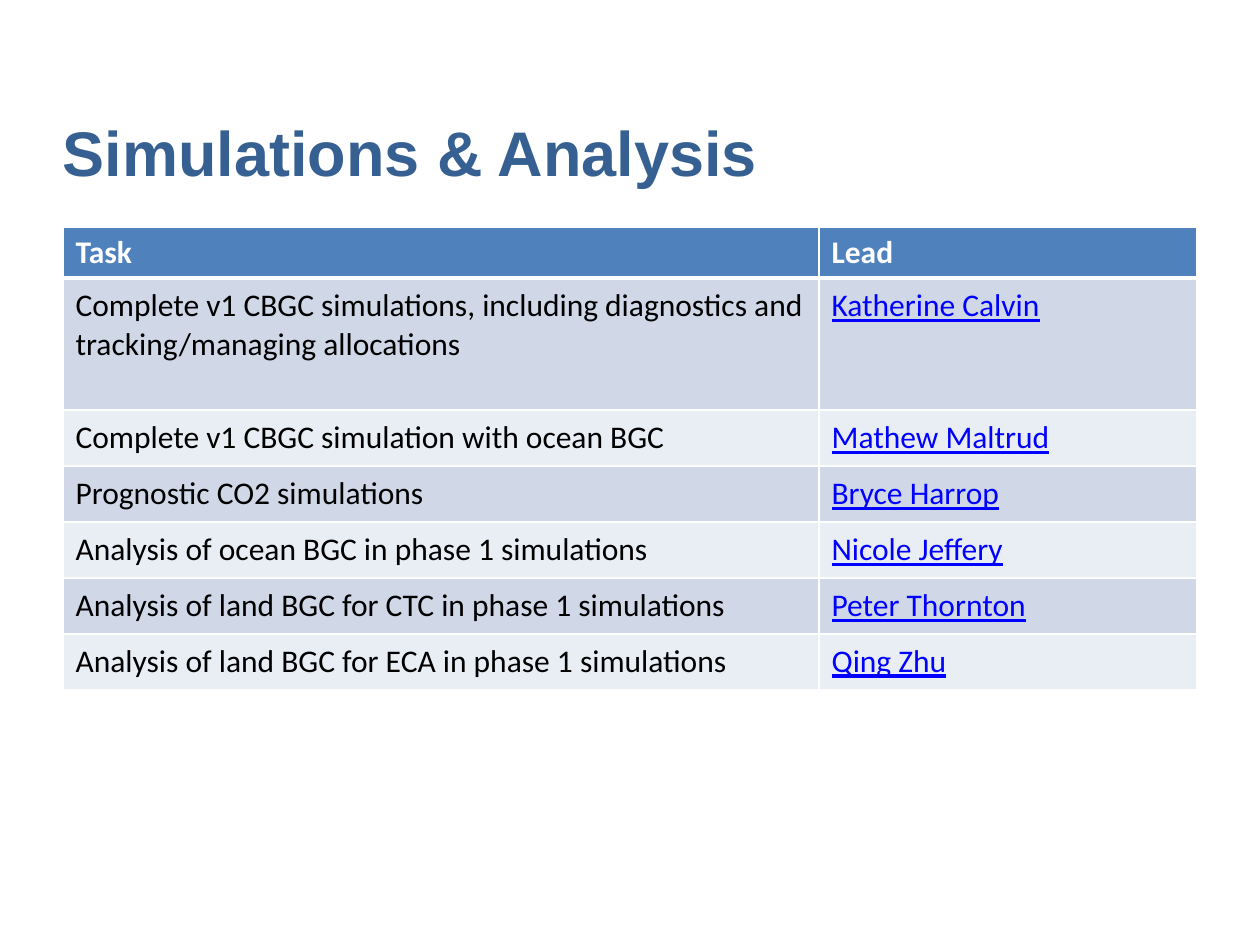
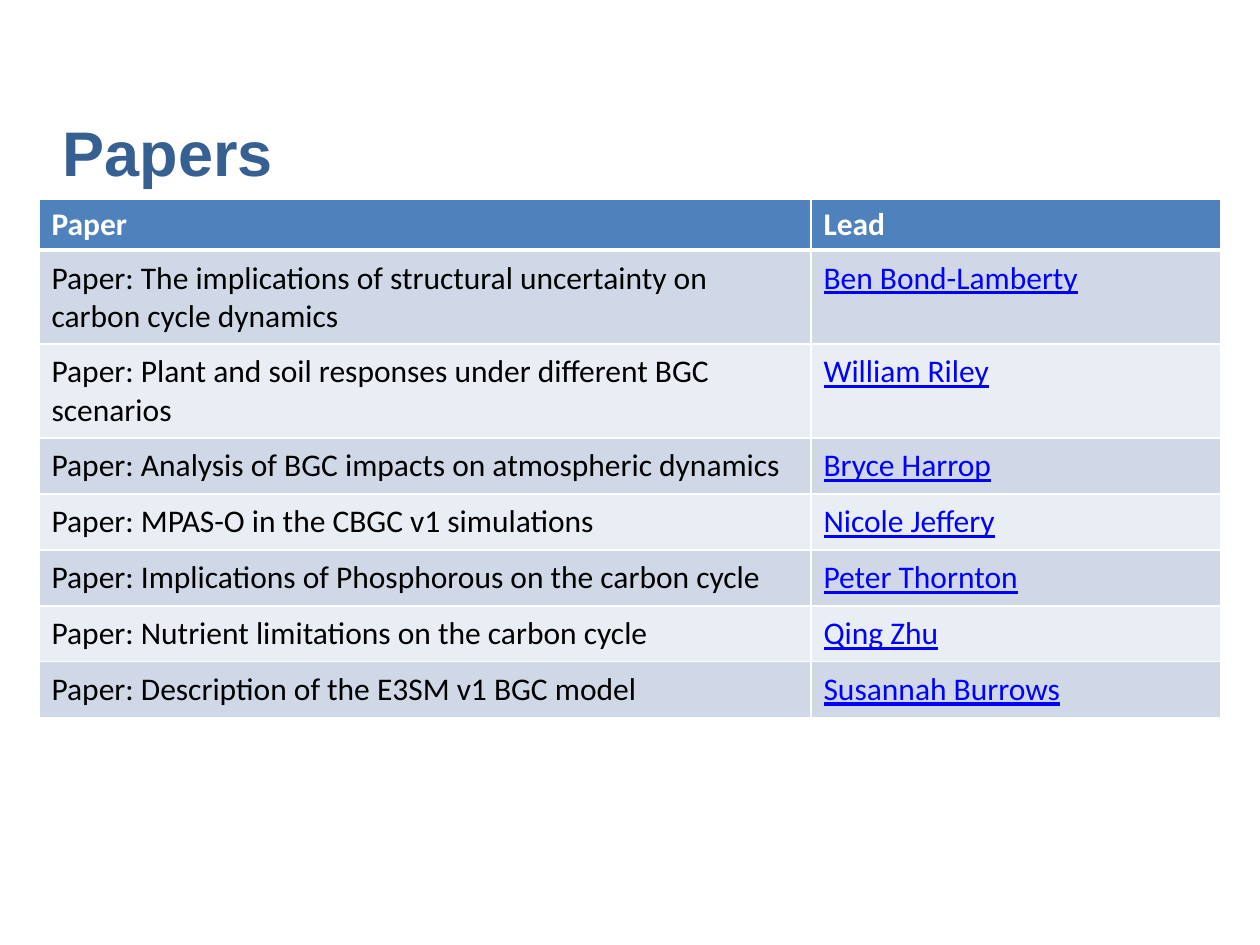
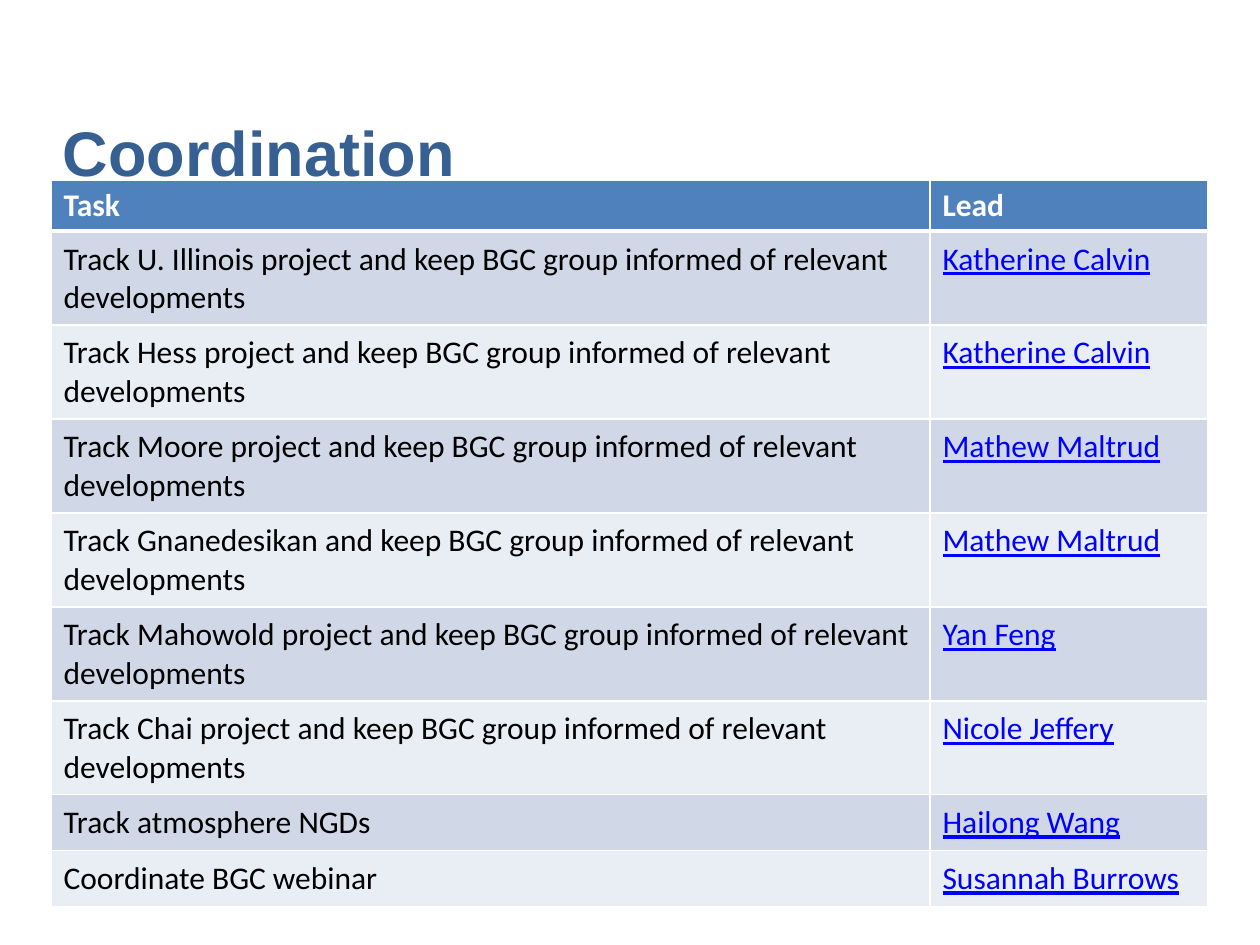
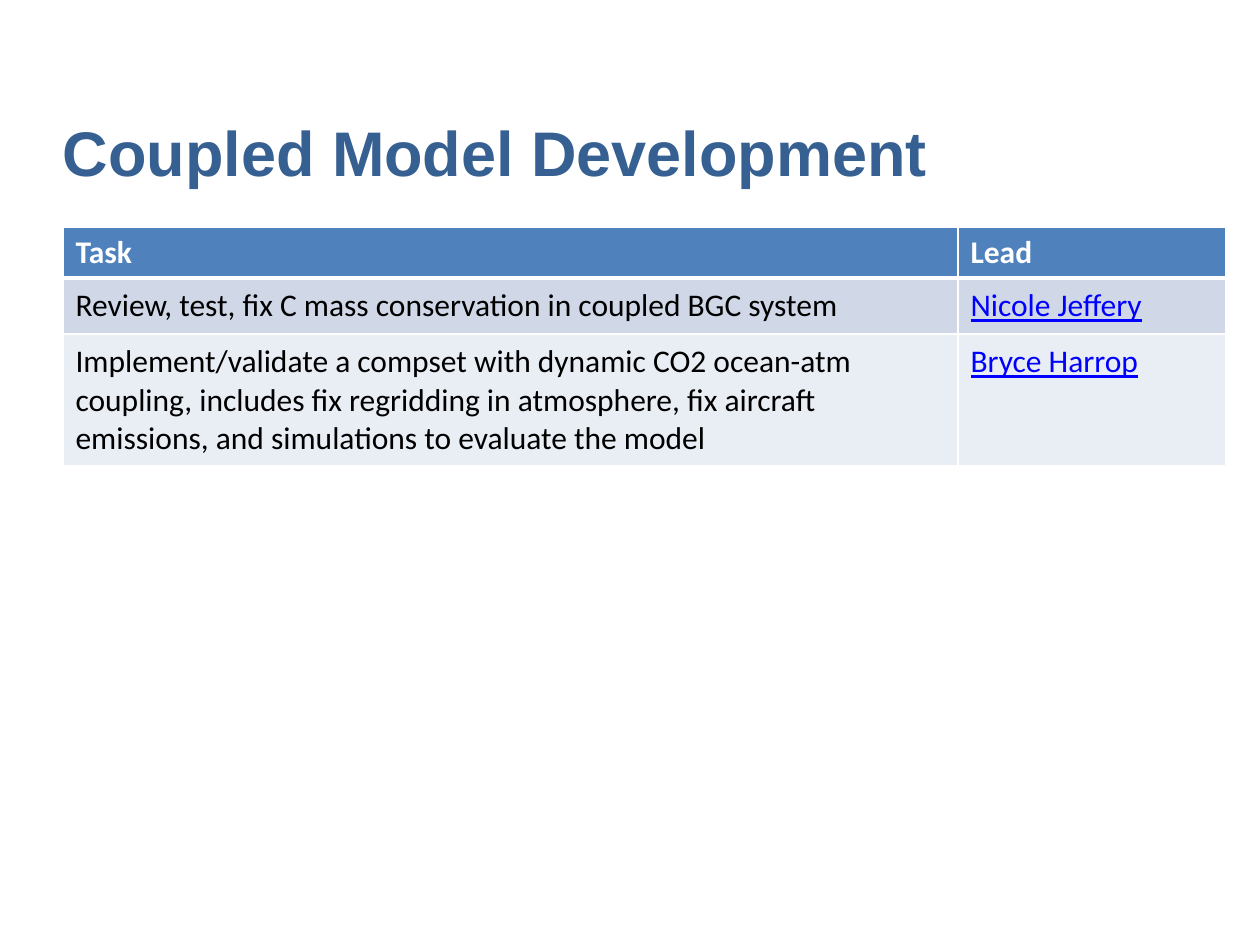
"""Build four slides listing biogeochemistry tasks and papers with their leads."""
from lxml import etree
from pptx import Presentation
from pptx import util as u
from pptx.dml.color import RGBColor
from pptx.enum import text
from pptx.oxml import ns

TRACK = "and keep BGC group informed of relevant developments"

SLIDES = [
    {
        "title": "Simulations & Analysis",
        "header": ("Task", "Lead"),
        "corner": (63, 227),
        "widths": (756, 378),
        "rows": [
            ("Complete v1 CBGC simulations, including diagnostics and tracking/managing allocations",
             "Katherine Calvin", 3),
            ("Complete v1 CBGC simulation with ocean BGC", "Mathew Maltrud", 1),
            ("Prognostic CO2 simulations", "Bryce Harrop", 1),
            ("Analysis of ocean BGC in phase 1 simulations", "Nicole Jeffery", 1),
            ("Analysis of land BGC for CTC in phase 1 simulations", "Peter Thornton", 1),
            ("Analysis of land BGC for ECA in phase 1 simulations", "Qing Zhu", 1),
        ],
    },
    {
        "title": "Papers",
        "header": ("Paper", "Lead"),
        "corner": (39, 199),
        "widths": (772, 410),
        "rows": [
            ("Paper: The implications of structural uncertainty on carbon cycle dynamics",
             "Ben Bond-Lamberty", 2),
            ("Paper: Plant and soil responses under different BGC scenarios", "William Riley", 2),
            ("Paper: Analysis of BGC impacts on atmospheric dynamics", "Bryce Harrop", 1),
            ("Paper: MPAS-O in the CBGC v1 simulations", "Nicole Jeffery", 1),
            ("Paper: Implications of Phosphorous on the carbon cycle", "Peter Thornton", 1),
            ("Paper: Nutrient limitations on the carbon cycle", "Qing Zhu", 1),
            ("Paper: Description of the E3SM v1 BGC model", "Susannah Burrows", 1),
        ],
    },
    {
        "title": "Coordination",
        "header": ("Task", "Lead"),
        "corner": (51, 180),
        "widths": (879, 278),
        "rows": [
            (f"Track U. Illinois project {TRACK}", "Katherine Calvin", 2),
            (f"Track Hess project {TRACK}", "Katherine Calvin", 2),
            (f"Track Moore project {TRACK}", "Mathew Maltrud", 2),
            (f"Track Gnanedesikan {TRACK}", "Mathew Maltrud", 2),
            (f"Track Mahowold project {TRACK}", "Yan Feng", 2),
            (f"Track Chai project {TRACK}", "Nicole Jeffery", 2),
            ("Track atmosphere NGDs", "Hailong Wang", 1),
            ("Coordinate BGC webinar", "Susannah Burrows", 1),
        ],
    },
    {
        "title": "Coupled Model Development",
        "header": ("Task", "Lead"),
        "corner": (63, 227),
        "widths": (895, 268),
        "rows": [
            ("Review, test, fix C mass conservation in coupled BGC system", "Nicole Jeffery", 1),
            ("Implement/validate a compset with dynamic CO2 ocean-atm coupling, includes fix "
             "regridding in atmosphere, fix aircraft emissions, and simulations to evaluate the model",
             "Bryce Harrop", 3),
        ],
    },
]

COLORS = {
    "title": "376092",
    "header": "4F81BD",
    "odd": "D0D8E8",
    "even": "E9EDF4",
    "white": "FFFFFF",
    "black": "000000",
    "lead": "0000FF",
}
TITLE = {"name": "Arial", "size": u.Pt(36), "bold": True}
HEADER = {"name": "Calibri", "size": u.Pt(18), "bold": True}
TASK = {**HEADER, "bold": False}
LEAD = {**TASK, "underline": True}

PX_PER_INCH = 126
PAGE_SIZE = (1260, 945)
TITLE_BOX = (63, 38, 1134, 151)
HEADER_HEIGHT = 51
LINE_HEIGHT = 38
CELL_INSET = 9


def px(length):
    return u.Emu(round(length * u.Inches(1) / PX_PER_INCH))


def write(frame, words, style, color):
    para = frame.paragraphs[0]
    span = para.add_run()
    span.text = words
    for name, value in style.items():
        setattr(span.font, name, value)
    span.font.color.rgb = RGBColor.from_string(COLORS[color])


def add_title(page, words):
    frame = page.shapes.add_textbox(*map(px, TITLE_BOX)).text_frame
    frame.word_wrap = True
    frame.vertical_anchor = text.MSO_ANCHOR.BOTTOM
    for side in ("left", "top", "right", "bottom"):
        setattr(frame, f"margin_{side}", 0)
    write(frame, words, TITLE, "title")


def add_borders(cell, top, bottom):
    properties = cell._tc.get_or_add_tcPr()
    for side, points in {"L": 1, "R": 1, "T": top, "B": bottom}.items():
        line = etree.SubElement(properties, ns.qn(f"a:ln{side}"), w=str(u.Pt(points)))
        fill = etree.SubElement(line, ns.qn("a:solidFill"))
        etree.SubElement(fill, ns.qn("a:srgbClr"), val=COLORS["white"])


def fill_cell(cell, words, style, color, row):
    add_borders(cell, 3 if row == 1 else 1, 3 if row == 0 else 1)
    cell.fill.solid()
    band = "header" if row == 0 else "odd" if row % 2 else "even"
    cell.fill.fore_color.rgb = RGBColor.from_string(COLORS[band])
    if row:
        cell.margin_top = cell.margin_bottom = px(CELL_INSET)
    write(cell.text_frame, words, style, color)


def add_lead_table(page, content):
    rows = content["rows"]
    heights = [HEADER_HEIGHT] + [2 * CELL_INSET + LINE_HEIGHT * lines for *_, lines in rows]
    widths = content["widths"]
    box = (*content["corner"], sum(widths), sum(heights))
    table = page.shapes.add_table(len(heights), len(widths), *map(px, box)).table
    for column, width in zip(table.columns, widths):
        column.width = px(width)
    for table_row, height in zip(table.rows, heights):
        table_row.height = px(height)
    for column, words in enumerate(content["header"]):
        fill_cell(table.cell(0, column), words, HEADER, "white", 0)
    for row, (task, lead, _) in enumerate(rows, 1):
        fill_cell(table.cell(row, 0), task, TASK, "black", row)
        fill_cell(table.cell(row, 1), lead, LEAD, "lead", row)


def main():
    deck = Presentation()
    deck.slide_width, deck.slide_height = map(px, PAGE_SIZE)
    for content in SLIDES:
        page = deck.slides.add_slide(deck.slide_layouts[6])
        add_title(page, content["title"])
        add_lead_table(page, content)
    deck.save("out.pptx")


if __name__ == "__main__":
    main()
